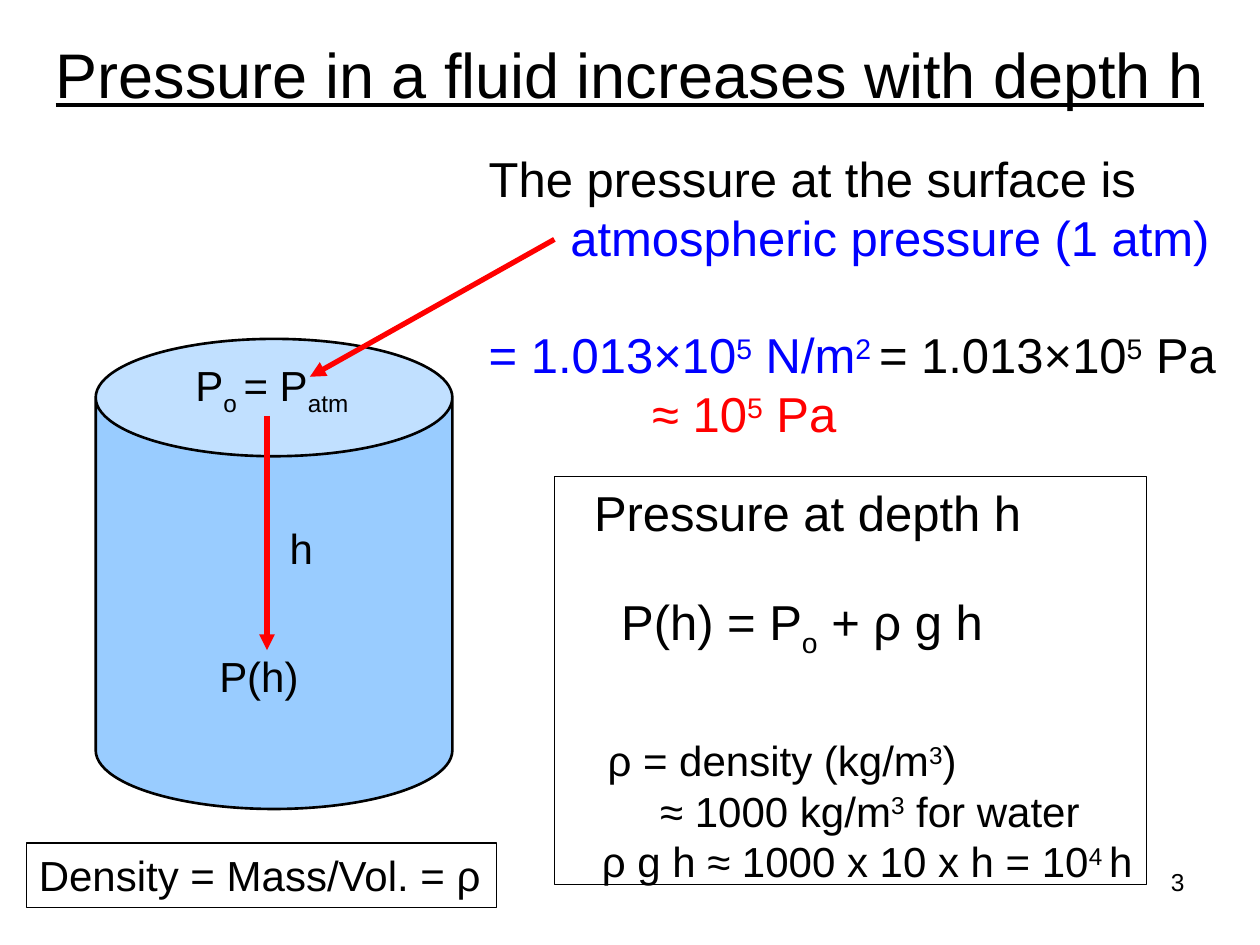
from lxml import etree
from pptx import Presentation
from pptx.dml.color import RGBColor
from pptx.enum.shapes import MSO_CONNECTOR, MSO_SHAPE
from pptx.enum.text import MSO_ANCHOR, MSO_AUTO_SIZE, PP_ALIGN
from pptx.oxml.ns import qn
from pptx.util import Pt

STRAIGHT = MSO_CONNECTOR.STRAIGHT
CAN = MSO_SHAPE.CAN
MIDDLE = MSO_ANCHOR.MIDDLE
NO_AUTOFIT = MSO_AUTO_SIZE.NONE
CENTER, LEFT, RIGHT = PP_ALIGN.CENTER, PP_ALIGN.LEFT, PP_ALIGN.RIGHT

BLACK = RGBColor(0x00, 0x00, 0x00)
BLUE = RGBColor(0x00, 0x00, 0xFF)
RED = RGBColor(0xFF, 0x00, 0x00)
WATER = RGBColor(0x99, 0xCC, 0xFF)
FONT = "Arial"
LEADING = 1.2
SUB, SUPER = -25, 30

deck = Presentation()
deck.slide_width, deck.slide_height = Pt(720), Pt(540)
page = deck.slides.add_slide(deck.slide_layouts[5])


def add_text(left, top, width, height, lines, inset=(7.2, 3.6), outlined=False, align=LEFT):
    """Lines are (size, indent, space before, leading, spans); spans are (text, baseline, colour)."""
    box = page.shapes.add_textbox(Pt(left), Pt(top), Pt(width), Pt(height))
    if outlined:
        box.line.color.rgb = BLACK
        box.line.width = Pt(0.75)
    frame = box.text_frame
    frame.word_wrap = True
    frame.margin_left, frame.margin_top = Pt(inset[0]), Pt(inset[1])
    frame.margin_right = Pt(inset[0]) if align == RIGHT else 0
    frame.margin_bottom = Pt(inset[1])
    for index, (size, indent, before, leading, spans) in enumerate(lines):
        para = frame.paragraphs[0] if index == 0 else frame.add_paragraph()
        para.alignment = align
        para.font.name, para.font.size = FONT, Pt(size)
        para.line_spacing = Pt(leading * LEADING)
        para.space_before = Pt(before)
        properties = para._p.get_or_add_pPr()
        properties.set("marL", str(Pt(indent)))
        properties.set("indent", "0")
        for text, baseline, color in spans:
            span = para.add_run()
            span.text = text
            span.font.color.rgb = color
            if baseline:
                span._r.get_or_add_rPr().set("baseline", str(baseline * 1000))


def add_arrow(start_x, start_y, end_x, end_y):
    arrow = page.shapes.add_connector(STRAIGHT, Pt(start_x), Pt(start_y), Pt(end_x), Pt(end_y))
    arrow.line.color.rgb = RED
    arrow.line.width = Pt(3)
    etree.SubElement(arrow.line._get_or_add_ln(), qn("a:tailEnd"), type="triangle")
    etree.SubElement(arrow._element.spPr, qn("a:effectLst"))


# Title
title = page.shapes.title
title.left, title.top, title.width, title.height = 0, 0, Pt(720), Pt(83.5)
title.text_frame.text = "Pressure in a fluid increases with depth h"
title.text_frame.auto_size = NO_AUTOFIT
title.text_frame.vertical_anchor = MIDDLE
heading = title.text_frame.paragraphs[0]
heading.alignment = CENTER
heading.font.name, heading.font.size = FONT, Pt(36)
heading.font.underline = True
heading.font.color.rgb = BLACK

# Fluid cylinder with the depth arrow
cylinder = page.shapes.add_shape(CAN, Pt(54.7), Pt(193.7), Pt(203.8), Pt(268.6))
cylinder.adjustments[0] = 0.329
cylinder.shadow.inherit = False
cylinder.fill.solid()
cylinder.fill.fore_color.rgb = WATER
cylinder.line.color.rgb = BLACK
cylinder.line.width = Pt(1.5)
add_arrow(152.6, 237.6, 152.6, 371.5)

# Cylinder labels
surface_label = [("P", 0, BLACK), ("o ", SUB, BLACK), ("= P", 0, BLACK), ("atm", SUB, BLACK)]
add_text(158.4, 295.2, 28, 36, [(24, 0, 0, 24, [("h", 0, BLACK)])])
add_text(111.6, 209.5, 95.8, 28.8, [(24, 0, 0, 24, surface_label)], inset=(0, 0))
add_text(125.3, 371.5, 59, 28.8, [(24, 0, 0, 24, [("P(h)", 0, BLACK)])], inset=(0, 0))

# Pressure at depth
add_text(316.8, 272.2, 338.4, 233.3, [
    (28, 15.6, 0, 28, [("Pressure at depth h", 0, BLACK)]),
    (28, 31.1, 33.6, 28, [("P(h) = P", 0, BLACK), ("o", SUB, BLACK), (" + ρ g h", 0, BLACK)]),
    (24, 23.3, 38.6, 28, [("ρ = density (kg/m", 0, BLACK), ("3", SUPER, BLACK), (")", 0, BLACK)]),
    (24, 53.4, 0, 24, [("≈ 1000 kg/m", 0, BLACK), ("3", SUPER, BLACK), (" for water", 0, BLACK)]),
    (24, 20, 0, 24, [("ρ g h ≈ 1000 x 10 x h = 10", 0, BLACK), ("4 ", SUPER, BLACK),
                     ("h", 0, BLACK)]),
], outlined=True)

# Pressure at the surface
add_text(272.2, 81.4, 432, 175.7, [
    (28, 0, 0, 28, [("The pressure at the surface is", 0, BLACK)]),
    (28, 46.7, 0, 28, [("atmospheric pressure (1 atm)", 0, BLUE)]),
    (28, 0, 33.6, 28, [("= 1.013×10", 0, BLUE), ("5", SUPER, BLUE), (" N/m", 0, BLUE),
                       ("2 ", SUPER, BLUE), ("= 1.013×10", 0, BLACK), ("5", SUPER, BLACK),
                       (" Pa", 0, BLACK)]),
    (28, 93.4, 0, 28, [("≈ 10", 0, RED), ("5", SUPER, RED), (" Pa", 0, RED)]),
])
add_arrow(316.8, 136.8, 177.1, 215.3)

# Density definition and page number
add_text(15.1, 481.7, 268.6, 36.7, [(24, 0, 0, 24, [("Density = Mass/Vol. = ρ", 0, BLACK)])],
         outlined=True)
add_text(516.2, 491.8, 167.8, 37.4, [(14, 0, 0, 14, [("3", 0, BLACK)])], align=RIGHT)

deck.save("out.pptx")
